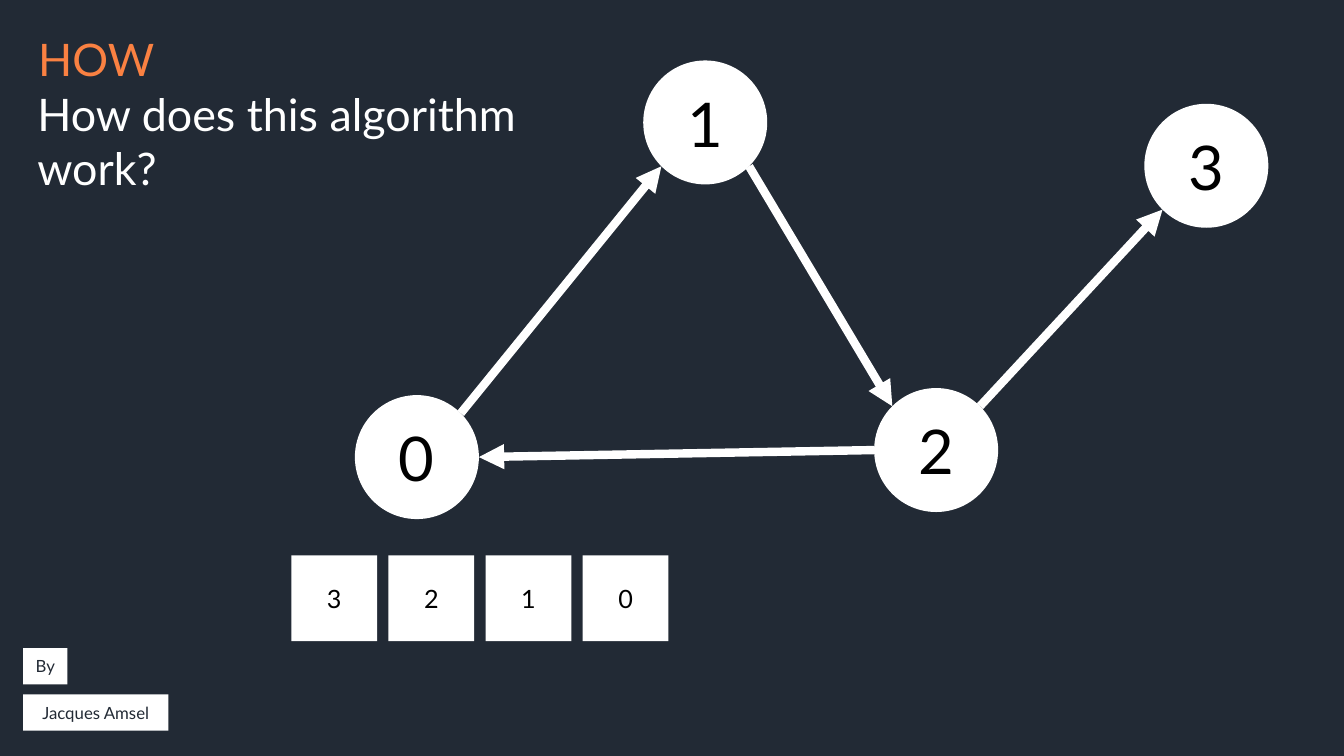
from math import sqrt

from lxml import etree
from pptx import Presentation
from pptx.dml.color import RGBColor
from pptx.enum.shapes import MSO_CONNECTOR, MSO_SHAPE
from pptx.enum.text import MSO_ANCHOR, MSO_AUTO_SIZE, PP_ALIGN
from pptx.oxml.ns import qn
from pptx.util import Inches, Pt

NAVY, WHITE, BLACK = "222A35", "FFFFFF", "000000"


def color(value):
    return RGBColor.from_string(value)


def add_label(kind, left, top, width, height, text, size, ink):
    """Add a white shape with centred text."""
    label = slide.shapes.add_shape(
        kind, Inches(left), Inches(top), Inches(width), Inches(height))
    label.shadow.inherit = False
    label.fill.solid()
    label.fill.fore_color.rgb = color(WHITE)
    label.line.fill.background()
    label.text_frame.vertical_anchor = MSO_ANCHOR.MIDDLE
    paragraph = label.text_frame.paragraphs[0]
    paragraph.alignment = PP_ALIGN.CENTER
    run = paragraph.add_run()
    run.text = text
    run.font.name = "Lato"
    run.font.size = Pt(size)
    run.font.color.rgb = color(ink)


prs = Presentation()
prs.slide_width = Inches(13.33)
prs.slide_height = Inches(7.5)
slide = prs.slides.add_slide(prs.slide_layouts[5])
slide.background.fill.solid()
slide.background.fill.fore_color.rgb = color(NAVY)

# Question as title, with the section word above it
question = slide.shapes.title
question.left, question.top = Inches(0.27), Inches(0.81)
question.width, question.height = Inches(5.59), Inches(1.18)
section = slide.shapes.add_textbox(
    Inches(0.28), Inches(0.27), Inches(9.92), Inches(0.64))
heading_fonts = []
for heading, text in ((question, "How does this algorithm work?"), (section, "HOW")):
    frame = heading.text_frame
    frame.word_wrap = True
    frame.auto_size = MSO_AUTO_SIZE.SHAPE_TO_FIT_TEXT
    frame.vertical_anchor = MSO_ANCHOR.TOP
    paragraph = frame.paragraphs[0]
    paragraph.alignment = PP_ALIGN.LEFT
    run = paragraph.add_run()
    run.text = text
    run.font.name = "Lato"
    run.font.size = Pt(32)
    heading_fonts.append(run.font)
question_font, section_font = heading_fonts
question_font.color.rgb = color(WHITE)
section_font.fill.gradient()
section_font.fill.gradient_angle = 0
for stop, value in zip(section_font.fill.gradient_stops, ("FA8142", "FF4088")):
    stop.color.rgb = color(value)

# Author tags
for text, top, width in (("By", 6.43, 0.44), ("Jacques Amsel", 6.89, 1.44)):
    add_label(MSO_SHAPE.RECTANGLE, 0.23, top, width, 0.36, text, 12, NAVY)

# Graph nodes
DIAMETER = 1.23
nodes = {"0": (3.52, 3.92), "1": (6.38, 0.6), "2": (8.67, 3.85), "3": (11.35, 1.03)}
for number, (left, top) in nodes.items():
    add_label(MSO_SHAPE.OVAL, left, top, DIAMETER, DIAMETER, number, 44, BLACK)

# Graph edges: each end is a direction from the node's centre to its rim
edges = (
    ("0", (1, -1), "1", (-1, 1)),
    ("1", (1, 1), "2", (-1, -1)),
    ("2", (-1, 0), "0", (1, 0)),
    ("2", (1, -1), "3", (-1, 1)),
)
for source, source_side, target, target_side in edges:
    ends = []
    for number, (dx, dy) in ((source, source_side), (target, target_side)):
        left, top = nodes[number]
        reach = DIAMETER / 2 / sqrt(dx * dx + dy * dy)
        ends += [Inches(left + DIAMETER / 2 + dx * reach),
                 Inches(top + DIAMETER / 2 + dy * reach)]
    edge = slide.shapes.add_connector(MSO_CONNECTOR.STRAIGHT, *ends)
    edge.line.color.rgb = color(WHITE)
    edge.line.width = Pt(6)
    etree.SubElement(edge.line._get_or_add_ln(), qn("a:tailEnd"), type="triangle")
    etree.SubElement(edge._element.spPr, qn("a:effectLst"))

# Stack of visited nodes
for position, number in enumerate("3210"):
    add_label(MSO_SHAPE.RECTANGLE, 2.89 + 0.963 * position, 5.51, 0.85, 0.85,
              number, 18, BLACK)

prs.save("out.pptx")
